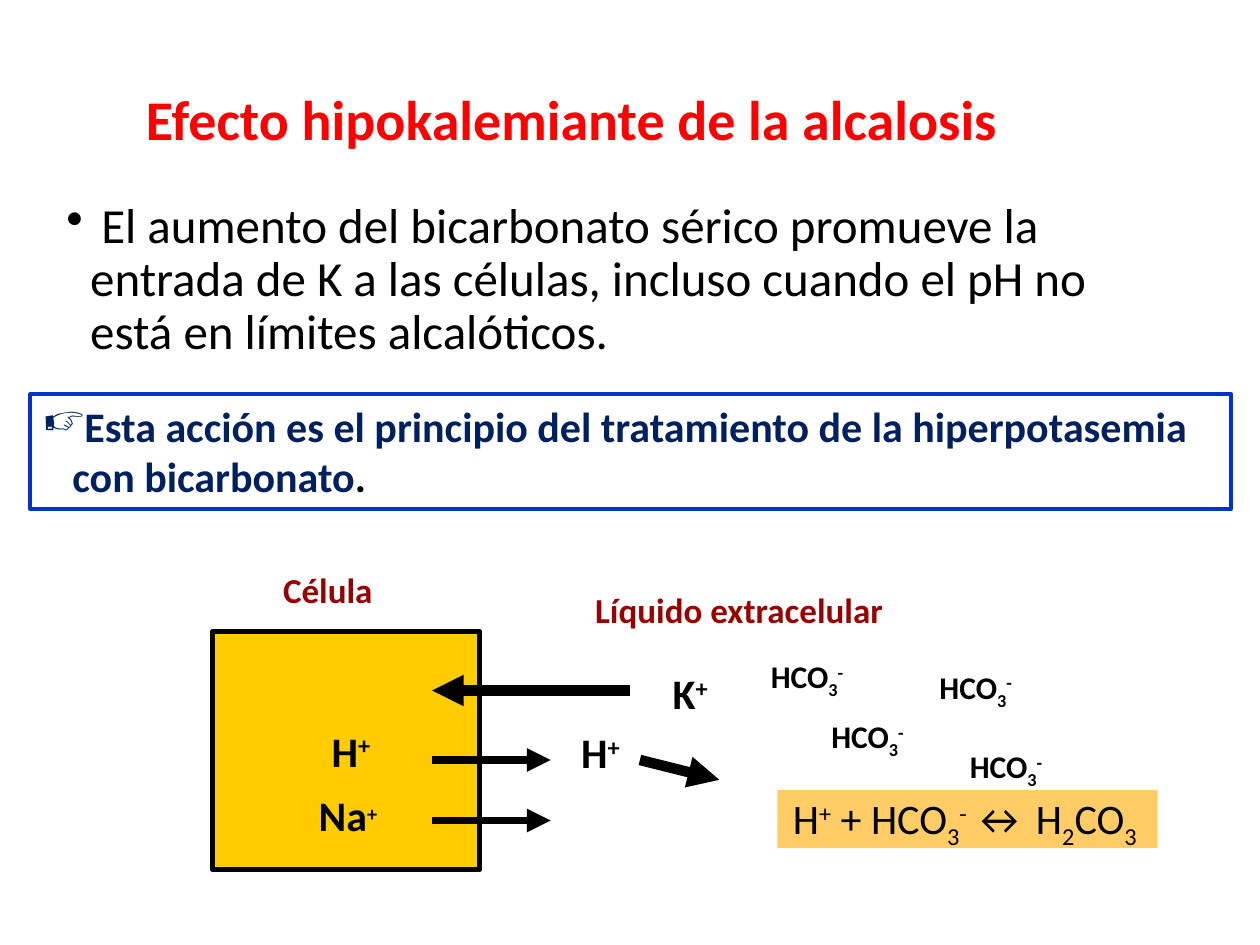
from lxml import etree
from pptx import Presentation
from pptx import util as u
from pptx.dml.color import RGBColor
from pptx.enum import shapes, text
from pptx.oxml import ns

BLACK, MAROON, NAVY = "000000", "990000", "002060"
SUPER, SUB = 30000, -25000
CENTER = text.PP_ALIGN.CENTER
GROW = text.MSO_AUTO_SIZE.SHAPE_TO_FIT_TEXT
MIDDLE = text.MSO_ANCHOR.MIDDLE
CALCULATED = {"word_wrap": False, "auto_size": GROW}


def rgb(hex_color):
    return RGBColor.from_string(hex_color)


def apply(target, values):
    for name, value in values.items():
        setattr(target, name, value)


def write(shape, runs, size, color=BLACK, bold=True, frame=None, para=None):
    apply(shape.text_frame, {"word_wrap": True, **(frame or {})})
    paragraph = shape.text_frame.paragraphs[0]
    apply(paragraph, para or {})
    for words, *details in runs:
        run = paragraph.add_run()
        run.text = words
        look = {"size": u.Pt(size), "name": "Calibri", "bold": bold}
        for detail in details:
            if isinstance(detail, dict):
                look.update(detail)
            else:
                run.font._element.set("baseline", str(detail))
        run_color = look.pop("color", color)
        apply(run.font, look)
        run.font.color.rgb = rgb(run_color)
    return paragraph


def add_bullet(paragraph, symbol, hang):
    props = paragraph._p.get_or_add_pPr()
    props.set("marL", str(u.Cm(hang)))
    props.set("indent", str(-u.Cm(hang)))
    etree.SubElement(props, ns.qn("a:buChar")).set("char", symbol)


def add_label(slide, box, runs, size, **style):
    label = slide.shapes.add_textbox(*map(u.Cm, box))
    return write(label, runs, size, **style)


def add_panel(slide, box, fill, border=None, width=0):
    panel = slide.shapes.add_shape(shapes.MSO_SHAPE.RECTANGLE, *map(u.Cm, box))
    panel.shadow.inherit = False
    panel.fill.solid()
    panel.fill.fore_color.rgb = rgb(fill)
    if border:
        panel.line.color.rgb = rgb(border)
        panel.line.width = u.Pt(width)
    else:
        panel.line.fill.background()
    return panel


def add_arrow(slide, start, end, width):
    arrow = slide.shapes.add_connector(
        shapes.MSO_CONNECTOR.STRAIGHT, *map(u.Cm, start + end))
    arrow.line.color.rgb = rgb(BLACK)
    arrow.line.width = u.Pt(width)
    head = etree.SubElement(arrow.line._get_or_add_ln(), ns.qn("a:tailEnd"))
    head.set("type", "triangle")
    etree.SubElement(arrow._element.spPr, ns.qn("a:effectLst"))


def add_statements(slide):
    add_label(slide, (2.69, 1.04, 18.9, 2.16),
              [("Efecto hipokalemiante de la alcalosis",)], 32, color="FF0000",
              frame={"vertical_anchor": text.MSO_ANCHOR.BOTTOM},
              para={"line_spacing": 0.9})
    effect = add_label(
        slide, (1.09, 3.94, 22.2, 4.19),
        [(" ", {"bold": True}),
         ("El aumento del bicarbonato sérico promueve la entrada de K a las "
          "células, incluso cuando el pH no está en límites alcalóticos.",)],
        28, bold=False, para={"line_spacing": 0.9})
    add_bullet(effect, "•", 0.48)


def add_cell(slide):
    cell = add_panel(slide, (4.29, 12.73, 5.38, 4.8), "FFCC00", BLACK, 3)
    write(cell, [(" H",), ("+", SUPER)], 24, para={"alignment": CENTER},
          frame={"word_wrap": False, "vertical_anchor": MIDDLE})
    inside, outside = 8.71, 11.1
    for level in (16.54, 15.32):
        add_arrow(slide, (inside, level), (outside, level), 4.5)
    add_arrow(slide, (12.7, 13.92), (inside, 13.92), 6)
    add_arrow(slide, (12.9, 15.32), (14.5, 15.72), 6)


def add_ions(slide):
    ions = [
        ("K", 24, (13.28, 13.34, 1.27, 1.3)),
        ("Na", 20, (6.15, 15.8, 1.73, 1.3)),
        ("H", 24, (11.43, 14.53, 1.35, 1.3)),
    ]
    for ion, sign_size, box in ions:
        add_label(slide, box, [(ion,), ("+", SUPER, {"size": u.Pt(sign_size)})],
                  24, frame=CALCULATED, para={"alignment": CENTER})
    bicarbonate = [("HCO",), ("3", SUB), ("-", SUPER)]
    for spot in ((15.29, 13.13), (18.69, 13.34), (16.51, 14.33), (19.3, 14.94)):
        add_label(slide, spot + (2.9, 1.02), bicarbonate, 18,
                  frame={"auto_size": GROW})


def add_compartments(slide):
    for name, box in (("Célula", (5.44, 11.33, 2.34, 1.12)),
                      ("Líquido extracelular", (11.71, 11.73, 6.38, 1.12))):
        add_label(slide, box, [(name,)], 20, color=MAROON, frame=CALCULATED,
                  para={"alignment": CENTER})


def add_reaction(slide):
    reaction = add_panel(slide, (15.67, 15.93, 7.67, 1.17), "FFCC66")
    write(reaction,
          [("H",), ("+", SUPER), (" + HCO",), ("3", SUB), ("- ", SUPER),
           ("↔ H",), ("2", SUB), ("CO",), ("3 ", SUB)],
          24, bold=False, frame={**CALCULATED, "vertical_anchor": MIDDLE},
          para={"alignment": CENTER, "line_spacing": 0.9})


def add_principle(slide):
    principle = add_panel(slide, (0.61, 7.95, 24.21, 2.31), "FFFFFF", "0033CC", 2.25)
    paragraph = write(
        principle,
        [("Esta acción es el principio del tratamiento de la hiperpotasemia "
          "con bicarbonato",), (".", {"color": BLACK})],
        24, color=NAVY, para={"alignment": text.PP_ALIGN.LEFT},
        frame={"auto_size": GROW, "vertical_anchor": text.MSO_ANCHOR.TOP})
    add_bullet(paragraph, "☞", 0.6)


def main():
    deck = Presentation()
    apply(deck, {"slide_width": u.Cm(25.4), "slide_height": u.Cm(19.05)})
    slide = deck.slides.add_slide(deck.slide_layouts[6])
    add_statements(slide)
    add_cell(slide)
    add_ions(slide)
    add_compartments(slide)
    add_reaction(slide)
    add_principle(slide)
    deck.save("out.pptx")


if __name__ == "__main__":
    main()
